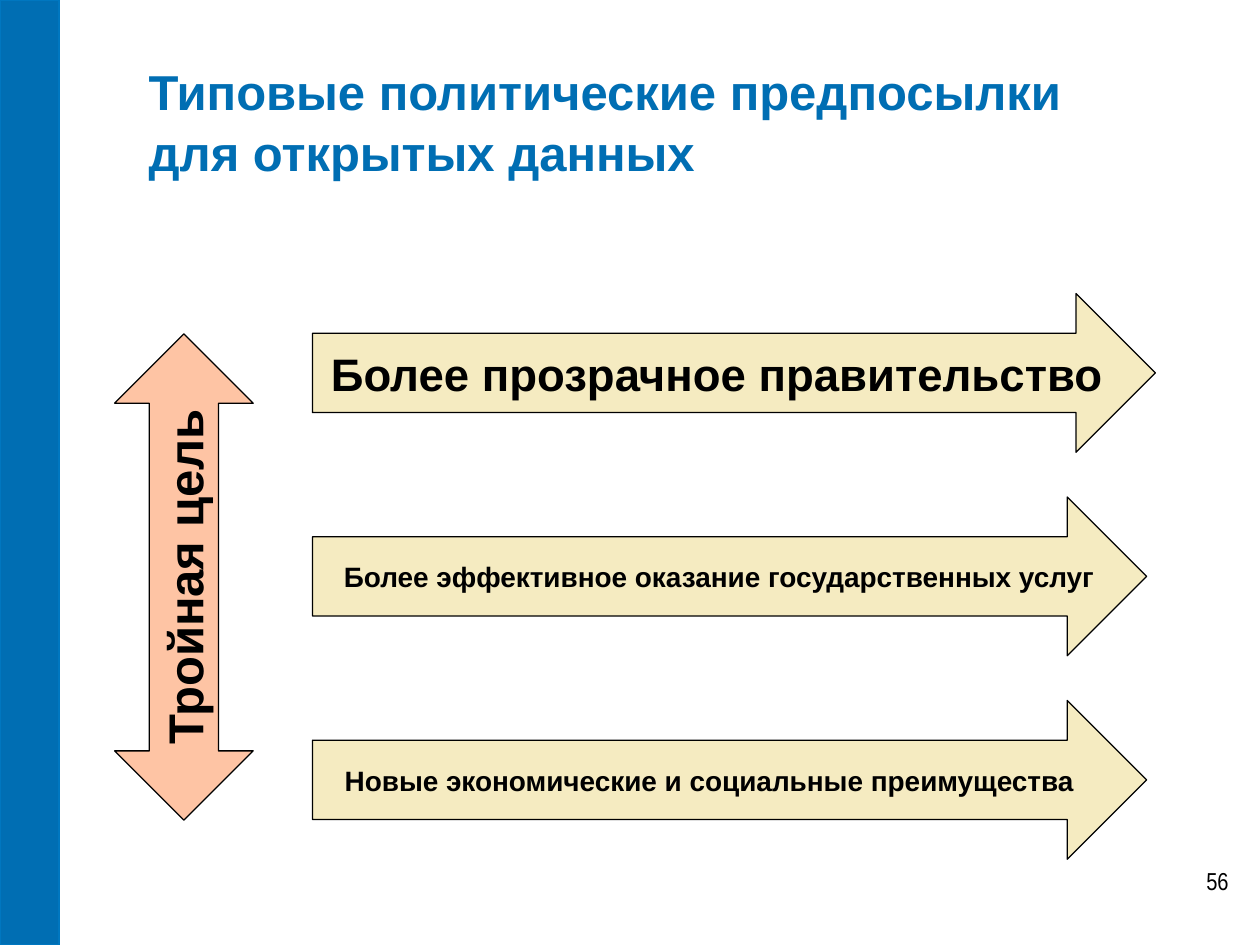
from pptx import Presentation
from pptx.dml.color import RGBColor as RGB
from pptx.enum.shapes import MSO_SHAPE as Shape
from pptx.enum.text import MSO_ANCHOR as Anchor, PP_ALIGN as Align
from pptx.util import Inches as In, Pt

HUES = {"bar": "006EB3", "edge": "0077C0", "sand": "F5EBC1",
        "peach": "FEC4A4", "ink": "000000"}
WIDE, HIGH = 10, 7.5
GOALS = [  # text, size, arrow width, right inset
    ("Более прозрачное правительство", 26, 6.69, 0.1),
    ("Более эффективное оказание государственных услуг", 16, 6.62, 0.1),
    ("Новые экономические и социальные преимущества", 16, 6.62, 0.26),
]


def hue(name):
    return RGB.from_string(HUES[name])


def write(frame, text, size, ink="ink", align=Align.LEFT, bold=True, face="Arial"):
    frame.text = text
    para = frame.paragraphs[0]
    para.alignment = align
    font = para.runs[0].font
    font.name, font.size, font.bold = face, Pt(size), bold
    font.color.rgb = hue(ink)


def add_block(slide, kind, box, fill, line="ink"):
    shape = slide.shapes.add_shape(kind, *map(In, box))
    shape.shadow.inherit = False
    shape.fill.solid()
    shape.fill.fore_color.rgb = hue(fill)
    shape.line.color.rgb = hue(line)
    shape.line.width = Pt(0.75)
    shape.text_frame.word_wrap = False
    shape.text_frame.vertical_anchor = Anchor.MIDDLE
    return shape


def add_title(slide, box):
    title = slide.shapes.title
    title.left, title.top, title.width, title.height = map(In, box)
    frame = title.text_frame
    write(frame, "Типовые политические предпосылки для открытых данных", 28, "bar")
    frame.word_wrap = True
    frame.vertical_anchor = Anchor.TOP
    frame.paragraphs[0].line_spacing = 1.04


def add_goals(slide, box):
    """Stack the right arrows at an equal pitch from the top of the box."""
    left, top, tall, pitch = box
    for row, (text, size, wide, inset) in enumerate(GOALS):
        place = (left, top + row * pitch, wide, tall)
        arrow = add_block(slide, Shape.RIGHT_ARROW, place, "sand")
        arrow.text_frame.margin_right = In(inset)
        write(arrow.text_frame, text, size, align=Align.RIGHT)


def add_aim(slide, box):
    arrow = add_block(slide, Shape.UP_DOWN_ARROW, box, "peach")
    write(arrow.text_frame, "Тройная цель", 28, align=Align.CENTER)
    arrow.text_frame._txBody.bodyPr.set("vert", "vert270")


def add_number(slide, box):
    frame = slide.shapes.add_textbox(*map(In, box)).text_frame
    frame.word_wrap = True
    write(frame, "56", 14, align=Align.RIGHT, bold=False, face="Arial Narrow")


def main():
    deck = Presentation()
    deck.slide_width, deck.slide_height = In(WIDE), In(HIGH)
    slide = deck.slides.add_slide(deck.slide_layouts[5])
    add_block(slide, Shape.RECTANGLE, (0, 0, 0.047 * WIDE, HIGH), "bar", "edge")
    add_title(slide, (1.08, 0.42, 8.17, 0.58))
    add_goals(slide, (2.48, 2.33, 1.26, 1.615))
    add_number(slide, (7.52, 6.82, 2.33, 0.52))
    add_aim(slide, (0.91, 2.65, 1.1, 3.86))
    deck.save("out.pptx")


if __name__ == "__main__":
    main()
